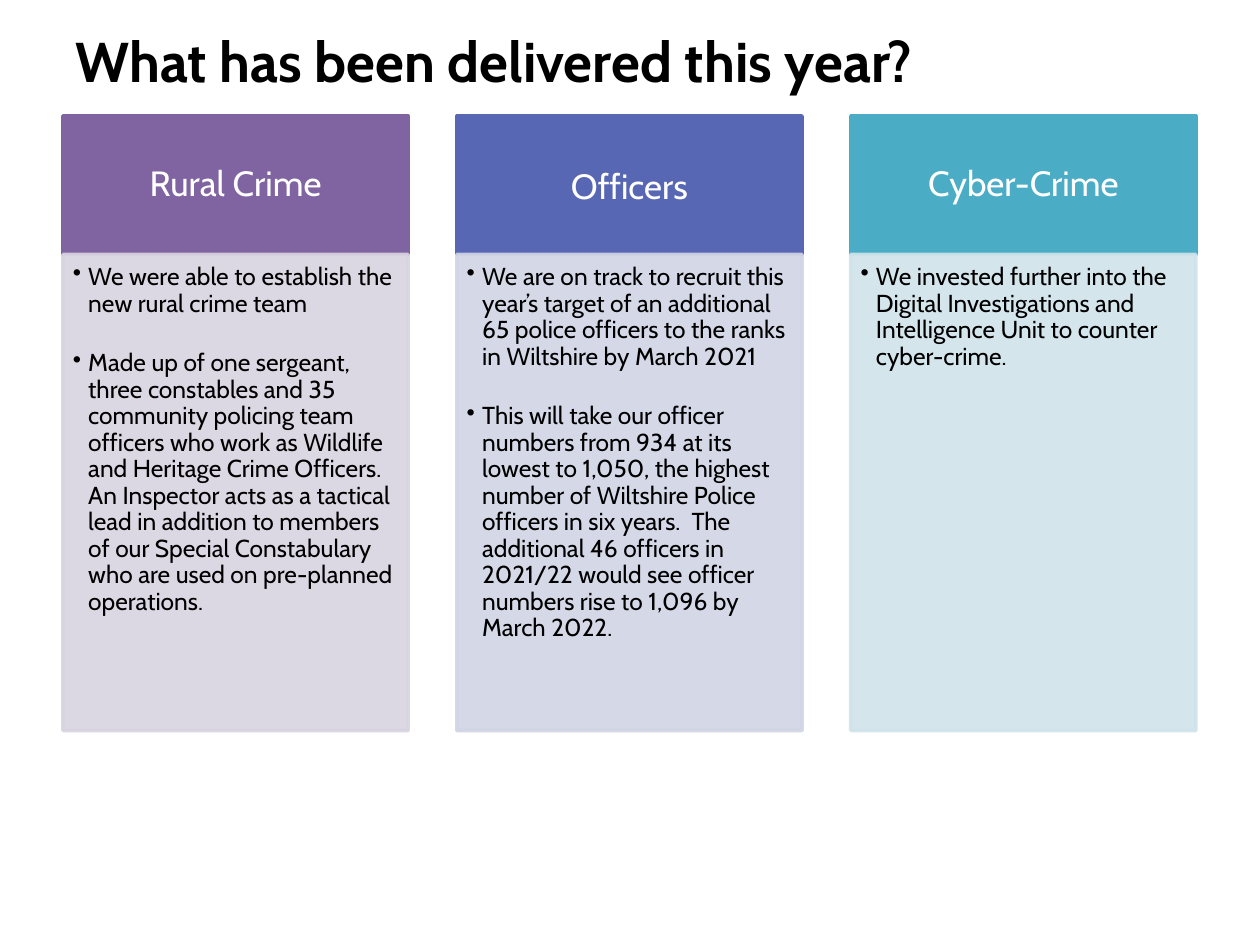
from dataclasses import dataclass

from lxml.etree import SubElement
from pptx import Presentation
from pptx.dml.color import RGBColor as Rgb
from pptx.enum.shapes import MSO_SHAPE as Preset
from pptx.enum.text import MSO_ANCHOR as Anchor, PP_ALIGN as Align
from pptx.oxml.ns import qn
from pptx.util import Cm, Pt


@dataclass(frozen=True)
class Theme:
    font: str = "Cabin"
    ink: str = "000000"
    light: str = "FFFFFF"
    title_size: int = 32
    header_size: int = 20
    body_size: int = 14
    paragraph_gap: int = 19
    line_spacing: float = 0.9
    border: int = 2
    body_opacity: int = 90
    headers: tuple = ("8064A2", "5767B4", "4BACC6")
    bodies: tuple = ("D8D3E0", "D1D4E5", "D0E3EA")


class SlideBuilder:
    def __init__(self, slide, theme):
        self.slide = slide
        self.theme = theme

    def frame(self, shape, insets, anchor):
        frame = shape.text_frame
        frame.word_wrap = True
        frame.vertical_anchor = anchor
        (frame.margin_left, frame.margin_top,
         frame.margin_right, frame.margin_bottom) = map(Cm, insets)
        return frame

    def run(self, paragraph, text, size, color, bold=False):
        run = paragraph.add_run()
        run.text = text
        run.font.name = self.theme.font
        run.font.size = Pt(size)
        run.font.bold = bold
        run.font.color.rgb = Rgb.from_string(color)

    def title(self, text, left, top, width, height):
        box = self.slide.shapes.add_textbox(Cm(left), Cm(top), Cm(width), Cm(height))
        frame = self.frame(box, (0.25, 0.13, 0.25, 0.13), Anchor.MIDDLE)
        self.run(frame.paragraphs[0], text, self.theme.title_size, self.theme.ink, True)

    def panel(self, left, top, width, height, color, opacity=100):
        panel = self.slide.shapes.add_shape(
            Preset.RECTANGLE, Cm(left), Cm(top), Cm(width), Cm(height))
        panel.shadow.inherit = False
        panel.line.width = Pt(self.theme.border)
        for fill in (panel.fill, panel.line.fill):
            fill.solid()
            fill.fore_color.rgb = Rgb.from_string(color)
        if opacity < 100:
            for tint in panel._element.spPr.iter(qn("a:srgbClr")):
                SubElement(tint, qn("a:alpha"), val=str(opacity * 1000))
        return panel

    def header(self, text, left, top, width, height, color, drop):
        panel = self.panel(left, top, width, height, color)
        frame = self.frame(panel, (0.4, 0.23 + drop, 0.4, 0.23), Anchor.MIDDLE)
        heading = frame.paragraphs[0]
        heading.alignment = Align.CENTER
        heading.line_spacing = self.theme.line_spacing
        self.run(heading, text, self.theme.header_size, self.theme.light)

    def bullets(self, points, left, top, width, height, color):
        panel = self.panel(left, top, width, height, color, self.theme.body_opacity)
        frame = self.frame(panel, (0.2, 0.2, 0.28, 0.3), Anchor.TOP)
        for index, point in enumerate(points):
            bullet = frame.add_paragraph() if index else frame.paragraphs[0]
            bullet.alignment = Align.LEFT
            bullet.line_spacing = self.theme.line_spacing
            if index:
                bullet.space_before = Pt(self.theme.paragraph_gap)
            properties = bullet._p.get_or_add_pPr()
            properties.set("marL", str(Cm(0.31)))
            properties.set("indent", str(Cm(-0.31)))
            SubElement(properties, qn("a:buChar"), char="•")
            self.run(bullet, point, self.theme.body_size, self.theme.ink)


TOPICS = [
    ("Rural Crime", 0, [
        "We were able to establish the new rural crime team",
        "Made up of one sergeant, three constables and 35 community policing team "
        "officers who work as Wildlife and Heritage Crime Officers. An Inspector acts "
        "as a tactical lead in addition to members of our Special Constabulary who "
        "are used on pre-planned operations.",
    ]),
    ("Officers", 0.12, [
        "We are on track to recruit this year’s target of an additional 65 police "
        "officers to the ranks in Wiltshire by March 2021",
        "This will take our officer numbers from 934 at its lowest to 1,050, the "
        "highest number of Wiltshire Police officers in six years.  The additional 46 "
        "officers in 2021/22 would see officer numbers rise to 1,096 by March 2022.",
    ]),
    ("Cyber-Crime", 0, [
        "We invested further into the Digital Investigations and Intelligence Unit to "
        "counter cyber-crime.",
    ]),
]


def main():
    deck = Presentation()
    deck.slide_width, deck.slide_height = Cm(25.4), Cm(19.05)
    theme = Theme()
    builder = SlideBuilder(deck.slides.add_slide(deck.slide_layouts[6]), theme)

    margin, column_width, pitch = 1.27, 6.96, 7.94
    header_top, header_height, body_height = 2.34, 2.79, 9.6

    builder.title("What has been delivered this year?", margin, 0.2, 22.86, 2.03)
    columns = zip(TOPICS, theme.headers, theme.bodies)
    for index, ((topic, drop, points), header_color, body_color) in enumerate(columns):
        left = margin + index * pitch
        builder.header(topic, left, header_top, column_width, header_height,
                       header_color, drop)
        builder.bullets(points, left, header_top + header_height, column_width,
                        body_height, body_color)
    deck.save("out.pptx")


if __name__ == "__main__":
    main()
